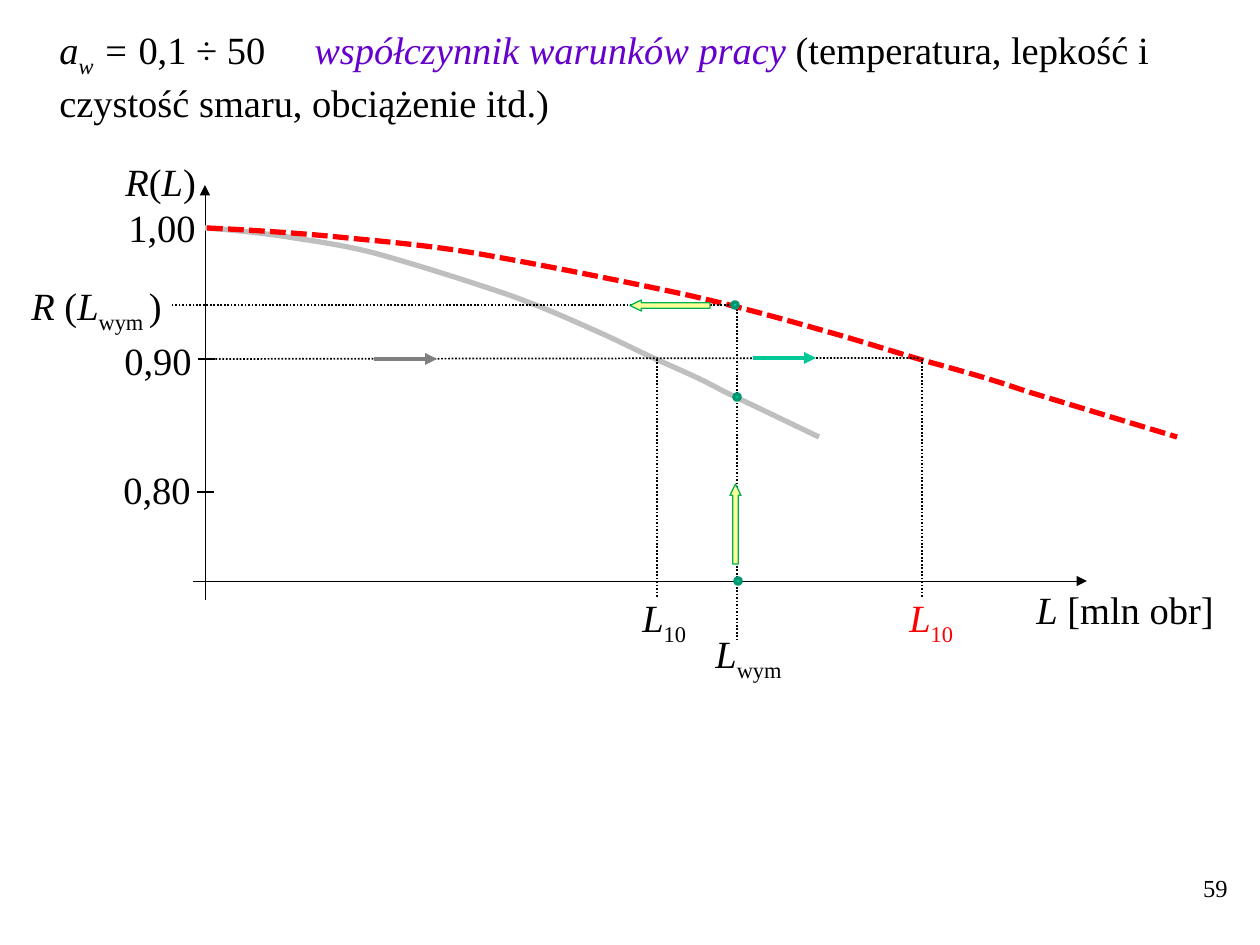
from dataclasses import dataclass
from typing import NamedTuple

from lxml import etree
from pptx import Presentation
from pptx.dml.color import RGBColor
from pptx.enum.dml import MSO_LINE
from pptx.enum.shapes import MSO_CONNECTOR, MSO_SHAPE
from pptx.enum.text import PP_ALIGN
from pptx.oxml.ns import qn
from pptx.util import Emu, Pt

STRAIGHT = MSO_CONNECTOR.STRAIGHT
UP_ARROW, LEFT_ARROW, OVAL = MSO_SHAPE.UP_ARROW, MSO_SHAPE.LEFT_ARROW, MSO_SHAPE.OVAL
DOTTED, DASHED = MSO_LINE.ROUND_DOT, MSO_LINE.SQUARE_DOT
LEFT, RIGHT = PP_ALIGN.LEFT, PP_ALIGN.RIGHT
FONT = "Times New Roman"
BLACK, RED, VIOLET = "000000", "FF0000", "6600CC"
EMU_PER_PX = 914400 / 126


class Run(NamedTuple):
    text: str
    italic: bool = False
    subscript: bool = False
    color: str = BLACK


@dataclass
class Label:
    x: int
    y: int
    width: int
    height: int
    runs: list[Run]
    size: int = 22
    align: PP_ALIGN = LEFT
    wrap: bool = False
    tab: int = 0


@dataclass
class Segment:
    start: tuple[int, int]
    end: tuple[int, int]
    width: float
    color: str = BLACK
    dash: MSO_LINE | None = None
    arrow: bool = False


def px(value: float) -> Emu:
    return Emu(round(value * EMU_PER_PX))


def rgb(color: str) -> RGBColor:
    return RGBColor.from_string(color)


def style_line(line, color: str, width: float, dash: MSO_LINE | None = None) -> None:
    line.color.rgb = rgb(color)
    line.width = Pt(width)
    if dash is not None:
        line.dash_style = dash


def draw_label(slide, label: Label) -> None:
    box = slide.shapes.add_textbox(px(label.x), px(label.y), px(label.width), px(label.height))
    box.text_frame.word_wrap = label.wrap
    paragraph = box.text_frame.paragraphs[0]
    paragraph.alignment = label.align
    if label.tab:
        tabs = etree.SubElement(paragraph._p.get_or_add_pPr(), qn("a:tabLst"))
        etree.SubElement(tabs, qn("a:tab"), pos=str(px(label.tab)), algn="l")
    for part in label.runs:
        run = paragraph.add_run()
        run.text = part.text
        run.font.name = FONT
        run.font.size = Pt(label.size)
        run.font.italic = part.italic
        run.font.color.rgb = rgb(part.color)
        if part.subscript:
            run.font._element.set("baseline", "-25000")


def draw_segment(slide, segment: Segment) -> None:
    connector = slide.shapes.add_connector(
        STRAIGHT, *map(px, segment.start), *map(px, segment.end))
    style_line(connector.line, segment.color, segment.width, segment.dash)
    if segment.arrow:
        etree.SubElement(connector.line._get_or_add_ln(), qn("a:tailEnd"), type="triangle")
    etree.SubElement(connector._element.spPr, qn("a:effectLst"))


def draw_curve(slide, origin_x: int, stretch: float, color: str,
               dash: MSO_LINE | None = None) -> None:
    points = [(px(origin_x + dx * stretch), px(y)) for dx, y in RELIABILITY]
    builder = slide.shapes.build_freeform(*points[0], scale=1.0)
    builder.add_line_segments(points[1:], close=False)
    curve = builder.convert_to_shape()
    steps = list(curve._element.iter(qn("a:lnTo")))[:-1]
    for first in range(0, len(steps), 3):
        bezier = etree.Element(qn("a:cubicBezTo"))
        steps[first].addprevious(bezier)
        for step in steps[first:first + 3]:
            bezier.append(step[0])
            step.getparent().remove(step)
    curve.shadow.inherit = False
    curve.fill.background()
    style_line(curve.line, color, 3, dash)


def draw_shape(slide, kind: MSO_SHAPE, x: int, y: int, width: int, height: int,
               fill: str, outline: str, line_width: float):
    shape = slide.shapes.add_shape(kind, px(x), px(y), px(width), px(height))
    shape.shadow.inherit = False
    shape.fill.solid()
    shape.fill.fore_color.rgb = rgb(fill)
    style_line(shape.line, outline, line_width)
    return shape


def draw_block_arrow(slide, kind: MSO_SHAPE, x: int, y: int, width: int, height: int) -> None:
    arrow = draw_shape(slide, kind, x, y, width, height, "FFFF99", "00B050", 0.75)
    arrow.adjustments[0] = 0.5
    arrow.adjustments[1] = 1.03


def draw_dot(slide, center_x: int, center_y: int) -> None:
    draw_shape(slide, OVAL, center_x - 3, center_y - 3, 6, 6, "00CC99", "009771", 2)


RELIABILITY = [
    (0, 228), (16, 229), (60, 233), (89, 238), (116, 242), (142, 246), (169, 253),
    (206, 263), (266, 282), (304, 295), (343, 309), (373, 323), (400, 335),
    (426, 347), (445, 357), (464, 365), (484, 374), (494, 378), (518, 391), (614, 437),
]

AXES = [
    Segment((737, 309), (737, 639), 1, dash=DOTTED),
    Segment((205, 600), (205, 185), 0.5, arrow=True),
    Segment((193, 581), (1087, 581), 0.5, arrow=True),
]

GUIDES = [
    Segment((198, 359), (215, 359), 0.75),
    Segment((197, 492), (214, 492), 0.75),
    Segment((657, 359), (657, 597), 1, dash=DOTTED),
    Segment((212, 359), (920, 358), 1, dash=DOTTED),
    Segment((922, 359), (922, 597), 1, dash=DOTTED),
    Segment((736, 305), (171, 305), 1, dash=DOTTED),
    Segment((753, 358), (816, 358), 2.25, "00C896", arrow=True),
    Segment((374, 359), (437, 359), 2.25, "808080", arrow=True),
]

DOTS = [(738, 581), (735, 305), (737, 397)]

LABELS = [
    Label(1162, 867, 78, 58, [Run("59")], size=14, align=RIGHT, wrap=True),
    Label(47, 20, 1124, 106, [
        Run("a", italic=True), Run("w", italic=True, subscript=True),
        Run(" = ", italic=True), Run("0,1 ÷ 50\t"),
        Run("współczynnik warunków pracy ", italic=True, color=VIOLET),
        Run("(temperatura, lepkość i czystość smaru, obciążenie itd.)"),
    ], wrap=True, tab=255),
    Label(113, 152, 118, 59, [Run("R", True), Run("("), Run("L", True), Run(")")]),
    Label(116, 198, 102, 59, [Run("1,00")]),
    Label(112, 331, 102, 59, [Run("0,90")]),
    Label(111, 460, 102, 59, [Run("0,80")]),
    Label(19, 276, 183, 59, [Run("R ", True), Run("("), Run("L", True),
                             Run("wym ", subscript=True), Run(")")]),
    Label(630, 588, 88, 59, [Run("L", True), Run("10", subscript=True)]),
    Label(897, 588, 88, 59, [Run("L", True, color=RED), Run("10", subscript=True, color=RED)]),
    Label(703, 624, 130, 59, [Run("L", True), Run("wym", subscript=True)]),
    Label(1024, 580, 210, 59, [Run("L", True), Run(" [mln obr]")]),
]


def main() -> None:
    presentation = Presentation()
    presentation.slide_width, presentation.slide_height = px(1260), px(945)
    slide = presentation.slides.add_slide(presentation.slide_layouts[6])
    for axis in AXES:
        draw_segment(slide, axis)
    draw_curve(slide, 205, 1, "BFBFBF")
    draw_curve(slide, 207, 1.58, RED, DASHED)
    for guide in GUIDES:
        draw_segment(slide, guide)
    draw_block_arrow(slide, UP_ARROW, 730, 484, 11, 80)
    draw_block_arrow(slide, LEFT_ARROW, 630, 300, 80, 11)
    for dot in DOTS:
        draw_dot(slide, *dot)
    for label in LABELS:
        draw_label(slide, label)
    presentation.save("out.pptx")


if __name__ == "__main__":
    main()
